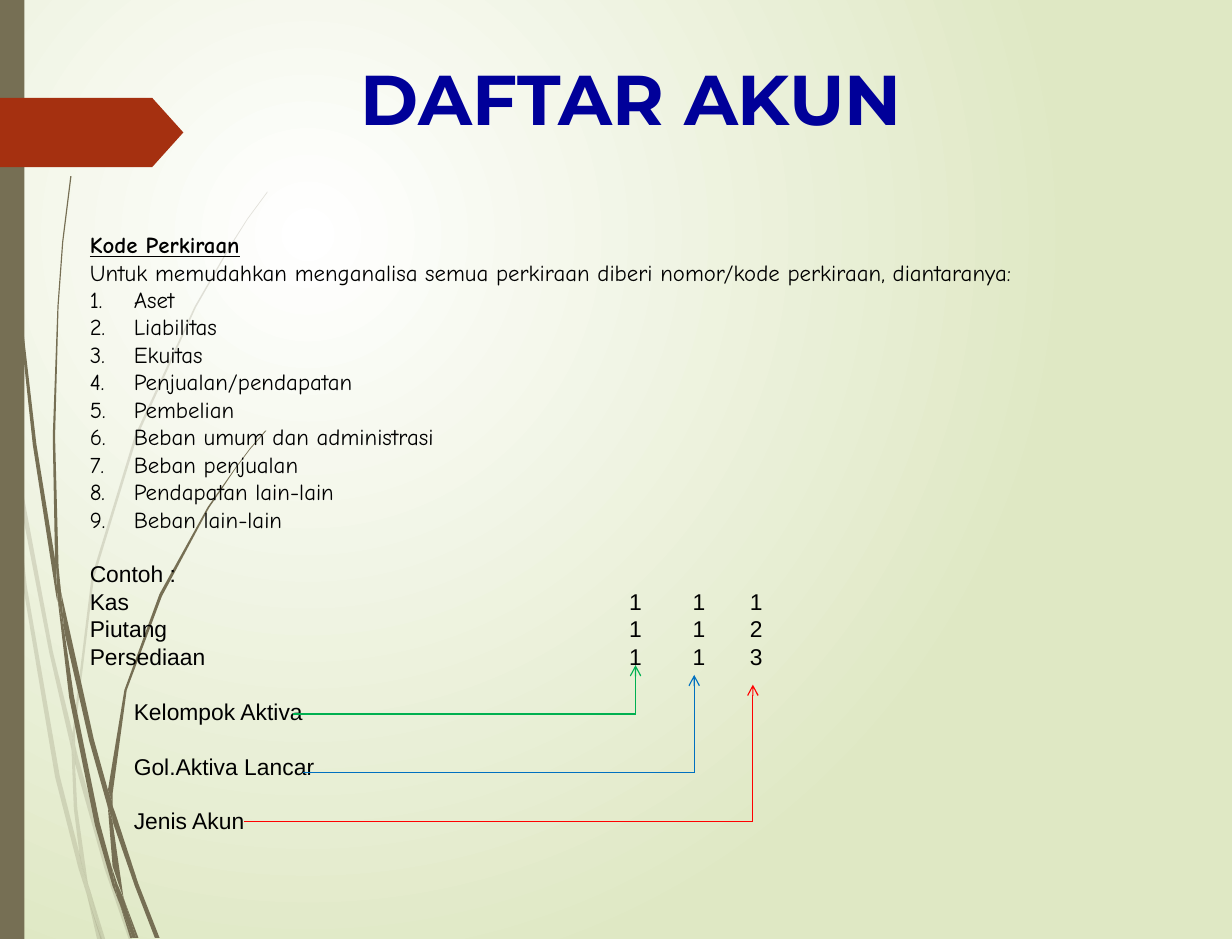
from dataclasses import dataclass

import lxml.etree
import pptx
import pptx.dml.color
import pptx.enum.shapes
import pptx.enum.text
import pptx.oxml
import pptx.oxml.ns
import pptx.util

Pt = pptx.util.Pt
qn = pptx.oxml.ns.qn
OLIVE = "766F54"
BLACK = "000000"
LINE_HEIGHT = 16.85
INDENT = 27
CODE_STOPS = (331, 370, 405)
GRASS_UNIT = Pt(0.72)


@dataclass
class Line:
    text: str
    font: str = "Arial"
    heading: bool = False
    numbered: bool = False
    indent: float = 0
    gap: float = 0
    stops: tuple[float, ...] = ()


@dataclass
class Leader:
    color: str
    start: float
    corner: float
    base: float
    tip: float


FAINT_BLADES = [
    [(8, 373), (6, 343), (0, 300), (0, 319), (7, 367)],
    [(42, 556), (61, 639), (62, 625), (45, 555), (10, 368), (12, 401)],
    [(67, 647), (64, 635), (64, 651), (89, 740), (110, 801), (113, 801), (93, 738)],
    [(87, 801), (90, 801), (77, 759)],
    [(68, 728), (51, 661), (23, 500), (12, 401), (8, 373), (20, 501), (47, 662),
     (67, 740), (74, 762), (72, 754)],
    [(61, 639), (63, 689), (68, 729), (70, 738), (77, 759), (75, 753), (66, 689),
     (64, 651), (64, 649)],
    [(64, 623), (80, 493), (117, 372), (167, 262), (196, 211), (211, 187), (228, 164),
     (228, 163), (211, 186), (195, 211), (166, 261), (115, 371), (78, 492), (62, 623),
     (62, 625), (64, 635)],
    [(74, 762), (83, 801), (87, 801)],
    [(64, 649), (64, 651), (64, 635), (62, 625), (61, 639)],
    [(70, 738), (68, 728), (72, 754), (74, 762), (86, 801), (87, 801), (77, 759)],
]
SOLID_BLADES = [
    [(6, 117), (14, 248), (28, 379), (48, 508), (49, 513), (48, 488), (48, 483),
     (31, 378), (16, 248), (6, 117), (4, 51), (3, 0), (2, 0), (3, 51)],
    [(76, 631), (92, 688), (92, 676), (92, 673), (80, 630), (52, 504), (55, 539)],
    [(98, 692), (95, 684), (96, 700), (115, 755), (132, 799), (136, 799), (118, 753)],
    [(95, 738), (85, 701), (63, 593), (55, 539), (49, 509), (59, 594), (81, 703),
     (96, 755), (102, 770), (100, 765)],
    [(52, 504), (50, 483), (47, 372), (50, 261), (54, 206), (61, 150), (60, 150),
     (53, 206), (49, 261), (45, 372), (47, 479), (52, 503)],
    [(116, 799), (118, 799), (106, 767)],
    [(49, 509), (55, 539), (52, 504), (52, 503), (48, 479), (48, 484)],
    [(96, 676), (108, 588), (138, 508), (178, 433), (201, 399), (213, 383), (227, 367),
     (226, 367), (213, 382), (201, 398), (177, 432), (136, 506), (106, 588), (92, 673),
     (96, 684)],
    [(102, 770), (111, 799), (113, 799)],
    [(92, 688), (96, 738), (101, 753), (106, 767), (105, 763), (96, 700), (94, 694)],
    [(92, 688), (94, 694), (96, 700), (96, 684), (92, 673), (92, 676)],
    [(100, 753), (95, 738), (100, 765), (102, 770), (113, 799), (116, 799), (106, 767)],
]

ACCOUNT_GROUPS = [
    "Aset", "Liabilitas", "Ekuitas", "Penjualan/pendapatan", "Pembelian",
    "Beban umum dan administrasi", "Beban penjualan", "Pendapatan lain-lain",
    "Beban lain-lain",
]
LINES = [
    Line("Kode Perkiraan", "Comic Neue", heading=True),
    Line("Untuk memudahkan menganalisa semua perkiraan diberi nomor/kode perkiraan, "
         "diantaranya:", "Comic Neue"),
    *[Line(group, "Comic Neue", numbered=True, indent=INDENT) for group in ACCOUNT_GROUPS],
    Line("Contoh :", gap=LINE_HEIGHT),
    *[Line(f"{account}\t1\t1\t{number}", stops=CODE_STOPS)
      for number, account in enumerate(("Kas", "Piutang", "Persediaan"), 1)],
    *[Line(level, indent=INDENT, gap=LINE_HEIGHT)
      for level in ("Kelompok Aktiva", "Gol.Aktiva Lancar", "Jenis Akun")],
]
LEADERS = [
    Leader("00B050", 180, 390, 438, 408),
    Leader("0070C0", 186, 426, 474, 414),
    Leader("FF0000", 150, 462, 504, 420),
]


def rgb(value: str) -> pptx.dml.color.RGBColor:
    return pptx.dml.color.RGBColor.from_string(value)


def paint(shape, color: str) -> None:
    shape.shadow.inherit = False
    shape.fill.solid()
    shape.fill.fore_color.rgb = rgb(color)
    shape.line.fill.background()


def paint_background(slide) -> None:
    fill = slide.background.fill
    fill.gradient()
    for stop, color, position in zip(fill.gradient_stops, ("FFFFFF", "DFE8C4"), (0, 1)):
        stop.color.rgb = rgb(color)
        stop.position = position
    gradient = slide.background._cSld.find(".//" + qn("a:gradFill"))
    gradient.remove(gradient.find(qn("a:lin")))
    circle = lxml.etree.SubElement(gradient, qn("a:path"), path="circle")
    lxml.etree.SubElement(circle, qn("a:fillToRect"),
                          l="50000", t="50000", r="100000", b="100000")


def draw_blade(slide, points: list[tuple[int, int]], opacity: int) -> None:
    builder = slide.shapes.build_freeform(*points[0], scale=GRASS_UNIT)
    builder.add_line_segments(points[1:], close=True)
    blade = builder.convert_to_shape()
    paint(blade, OLIVE)
    if opacity < 100:
        color = blade._element.spPr.find(qn("a:solidFill"))[0]
        lxml.etree.SubElement(color, qn("a:alpha"), val=str(opacity * 1000))


def write_line(paragraph, line: Line) -> None:
    paragraph.text = line.text
    paragraph.line_spacing = Pt(LINE_HEIGHT)
    paragraph.space_before = Pt(line.gap)
    justified = line.font == "Comic Neue"
    align = pptx.enum.text.PP_ALIGN
    paragraph.alignment = align.JUSTIFY if justified else align.LEFT
    properties = paragraph._p.get_or_add_pPr()
    properties.set("marL", str(Pt(line.indent)))
    if line.numbered:
        properties.set("indent", str(-Pt(line.indent)))
        lxml.etree.SubElement(properties, qn("a:buAutoNum"), type="arabicPeriod")
    if line.stops:
        tabs = lxml.etree.SubElement(properties, qn("a:tabLst"))
        for stop in line.stops:
            lxml.etree.SubElement(tabs, qn("a:tab"), pos=str(Pt(stop)), algn="l")
    set_font(paragraph.font, line.font, 14, BLACK, line.heading)
    paragraph.font.underline = line.heading


def set_font(font, name: str, size: float, color: str, bold: bool) -> None:
    font.name, font.size, font.bold = name, Pt(size), bold
    font.color.rgb = rgb(color)


def draw_stroke(slide, color: str, start: tuple, end: tuple, arrow: bool) -> None:
    stroke = slide.shapes.add_connector(
        pptx.enum.shapes.MSO_CONNECTOR.STRAIGHT, *map(Pt, start + end))
    stroke.line.color.rgb = rgb(color)
    stroke.line.width = Pt(0.75)
    if arrow:
        lxml.etree.SubElement(stroke.line._get_or_add_ln(), qn("a:tailEnd"), type="arrow")
    lxml.etree.SubElement(stroke._element.spPr, qn("a:effectLst"))


def draw_leader(slide, leader: Leader) -> None:
    corner = (leader.corner, leader.base)
    draw_stroke(slide, leader.color, (leader.start, leader.base), corner, False)
    draw_stroke(slide, leader.color, corner, (leader.corner, leader.tip), True)


def main() -> None:
    deck = pptx.Presentation()
    deck.slide_width, deck.slide_height = Pt(756), Pt(576)
    slide = deck.slides.add_slide(deck.slide_layouts.get_by_name("Title Only"))
    paint_background(slide)
    for blades, opacity in ((FAINT_BLADES, 20), (SOLID_BLADES, 100)):
        for points in blades:
            draw_blade(slide, points, opacity)

    preset = pptx.enum.shapes.MSO_SHAPE
    edge = slide.shapes.add_shape(preset.RECTANGLE, 0, 0, Pt(15), Pt(576))
    paint(edge, OLIVE)
    ribbon = slide.shapes.add_shape(preset.PENTAGON, 0, Pt(60), Pt(112.5), Pt(42.5))
    ribbon.adjustments[0] = 0.45
    paint(ribbon, "A53010")

    title = slide.shapes.title
    title.left, title.top, title.width, title.height = map(Pt, (50.4, 30.2, 673.9, 72.7))
    title.text_frame.auto_size = pptx.enum.text.MSO_AUTO_SIZE.NONE
    title.text_frame.vertical_anchor = pptx.enum.text.MSO_ANCHOR.TOP
    heading = title.text_frame.paragraphs[0]
    heading.text = "DAFTAR AKUN"
    heading.alignment = pptx.enum.text.PP_ALIGN.CENTER
    set_font(heading.font, "Montserrat", 43.2, "000099", True)

    chart_of_accounts = slide.shapes.add_textbox(Pt(48), Pt(138), Pt(624), Pt(424)).text_frame
    chart_of_accounts.word_wrap = True
    for index, line in enumerate(LINES):
        first = index == 0
        write_line(chart_of_accounts.paragraphs[0] if first
                   else chart_of_accounts.add_paragraph(), line)
    for leader in LEADERS:
        draw_leader(slide, leader)
    deck.save("out.pptx")


if __name__ == "__main__":
    main()
